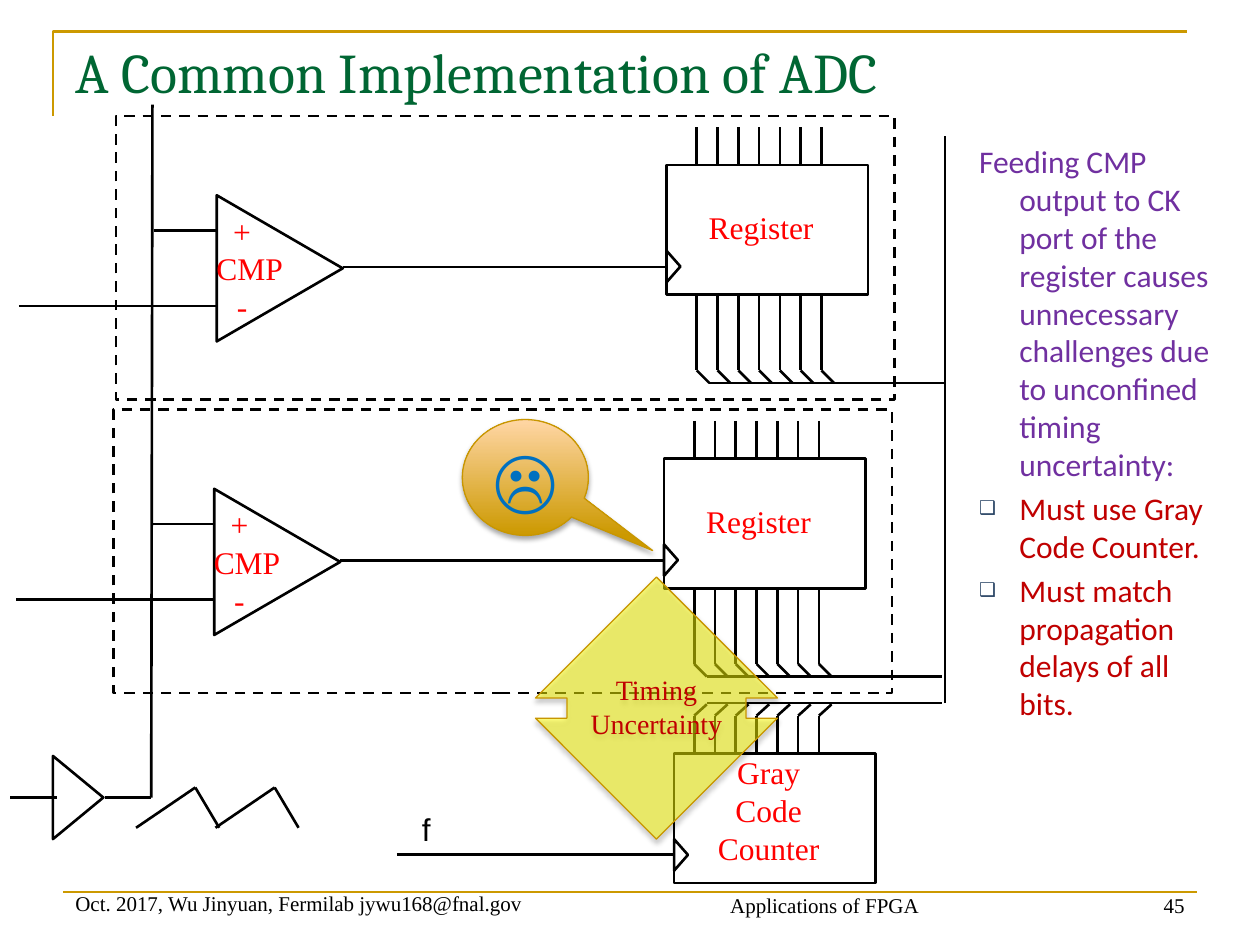
from dataclasses import dataclass

from lxml.etree import SubElement
from pptx import Presentation
from pptx.dml.color import RGBColor as RGB
from pptx.enum.dml import MSO_LINE as Dash
from pptx.enum.shapes import MSO_CONNECTOR as Conn, MSO_SHAPE as Kind
from pptx.enum.text import MSO_ANCHOR as Anchor, MSO_AUTO_SIZE as Fit, PP_ALIGN as Align
from pptx.oxml.ns import qn
from pptx.util import Inches, Pt


@dataclass(frozen=True)
class Theme:
    black: str = "000000"
    white: str = "FFFFFF"
    green: str = "006633"
    gold: str = "CC9900"
    edge: str = "C89600"
    peach: str = "FFD6A5"
    yellow: str = "FFFF00"
    red: str = "FF0000"
    dark: str = "C00000"
    purple: str = "7030A0"
    navy: str = "254061"
    blue: str = "0070C0"
    serif: str = "Times New Roman"
    sans: str = "Calibri"
    head: str = "Cambria"
    plain: str = "Arial"
    small: int = 12
    note: int = 16
    text: int = 18
    title: int = 32
    face: int = 40
    thin: float = 0.75
    wire: float = 1.5


T = Theme()
BITS = 7
PITCH = 0.165


def inches(*nums):
    return [Inches(n) for n in nums]


def style(para, size, color, face=T.serif, align=None):
    para.alignment = align
    font = para.font
    font.size, font.name = Pt(size), face
    font.color.rgb = RGB.from_string(color)


def write(shape, lines, size, color, face=T.serif, align=Align.CENTER,
          anchor=Anchor.MIDDLE, pad=(0.1, 0.05, 0.1, 0.05), wrap=True):
    """Fill a shape with one paragraph per line; pad is left, top, right, bottom."""
    frame = shape.text_frame
    frame.text = "\n".join(lines)
    frame.word_wrap, frame.vertical_anchor = wrap, anchor
    (frame.margin_left, frame.margin_top,
     frame.margin_right, frame.margin_bottom) = inches(*pad)
    for para in frame.paragraphs:
        style(para, size, color, face, align)
    return frame


def label(shapes, box, line, size=T.small, face=T.serif, **opts):
    return write(shapes.add_textbox(*inches(*box)), [line], size, T.black, face, **opts)


def draw(shapes, kind, box, fill=T.white, edge=T.black, width=T.wire):
    shape = shapes.add_shape(kind, *inches(*box))
    shape.shadow.inherit = False
    if fill:
        shape.fill.solid()
        shape.fill.fore_color.rgb = RGB.from_string(fill)
    else:
        shape.fill.background()
    shape.line.color.rgb = RGB.from_string(edge)
    shape.line.width = Pt(width)
    return shape


def wire(shapes, x1, y1, x2, y2, color=T.black):
    line = shapes.add_connector(Conn.STRAIGHT, *inches(x1, y1, x2, y2))
    line.line.color.rgb = RGB.from_string(color)
    line.line.width = Pt(T.wire)
    SubElement(line._element.spPr, qn("a:effectLst"))


def fan(shapes, x, y1, y2, lean=0):
    """Draw one wire per bit, each ending lean to the right of its start."""
    for i in range(BITS):
        left = x + i * PITCH
        wire(shapes, left, y1, left + lean, y2)


def wedge(shapes, box):
    shape = draw(shapes, Kind.ISOSCELES_TRIANGLE, box)
    shape.rotation = 90
    return shape


def block(shapes, x, y, lines, anchor=Anchor.MIDDLE):
    """Draw a clocked block with its clock mark."""
    shape = draw(shapes, Kind.RECTANGLE, (x, y, 1.6, 1.03))
    write(shape, lines, T.text, T.red, anchor=anchor, pad=(0, 0, 0.1, 0.05))
    wedge(shapes, (x - 0.07, y + 0.75, 0.25, 0.11))


def channel(slide, x, y):
    """Draw a comparator feeding a register inside a dashed box at x, y."""
    shapes = slide.shapes.add_group_shape().shapes
    cmp = wedge(shapes, (x + 0.72, y + 0.71, 1.16, 1))
    frame = write(cmp, ["+", "CMP", "-"], T.text, T.red, pad=(0, 0.1, 0, 0), wrap=False)
    frame._txBody.bodyPr.set("vert", "vert270")
    frame.paragraphs[1]._p.get_or_add_pPr().set("marL", str(Inches(0.12)))
    wire(shapes, x + 0.3, y + 0.91, x + 0.8, y + 0.91)
    wire(shapes, x - 0.77, y + 1.51, x + 0.8, y + 1.51)
    wire(shapes, x + 1.8, y + 1.2, x + 4.37, y + 1.2)
    block(shapes, x + 4.37, y + 0.39, ["Register"])
    bit = x + 4.61
    fan(shapes, bit, y + 0.09, y + 0.39)
    fan(shapes, bit, y + 1.42, y + 2.02)
    fan(shapes, bit, y + 2.02, y + 2.12, 0.1)
    wire(shapes, bit + 0.1, y + 2.12, x + 6.58, y + 2.12)
    box = draw(shapes, Kind.RECTANGLE, (x, y, 6.18, 2.25), None)
    box.line.dash_style = Dash.DASH


def counter(shapes):
    block(shapes, 5.35, 5.98, ["Gray", "Code", "Counter"], Anchor.TOP)
    fan(shapes, 5.51, 5.68, 5.98)
    fan(shapes, 5.51, 5.68, 5.59, 0.1)
    wire(shapes, 5.61, 5.58, 7.48, 5.58)
    wire(shapes, 3.15, 6.78, 5.35, 6.78)
    label(shapes, (3.25, 6.38, 0.29, 0.4), "f", T.text, T.plain,
          align=Align.LEFT, anchor=Anchor.TOP, wrap=False)


def ramp(slide):
    """Draw the buffer, its output line and the sawtooth wave."""
    shapes = slide.shapes
    wire(shapes, 1.2, 6.33, 1.21, 0.83)
    wedge(shapes, (0.29, 6.13, 0.66, 0.4))
    wire(shapes, 0.83, 6.33, 1.2, 6.33)
    wire(shapes, 0.08, 6.33, 0.45, 6.33)
    wave = slide.shapes.add_group_shape().shapes
    for x in (1.08, 1.71):
        wire(wave, x, 6.57, x + 0.47, 6.25)
        wire(wave, x + 0.47, 6.25, x + 0.66, 6.57)


def shade(shape):
    """Give a shape a soft shadow below it."""
    effects = shape._element.spPr.find(qn("a:effectLst"))
    cast = SubElement(effects, qn("a:outerShdw"), blurRad=str(Pt(3.1)),
                      dist=str(Pt(1.8)), dir="5400000", rotWithShape="0")
    tint = SubElement(cast, qn("a:srgbClr"), val=T.black)
    SubElement(tint, qn("a:alpha"), val="35000")


def marks(shapes):
    """Draw the sad face callout and the see-through timing arrow."""
    face = draw(shapes, Kind.OVAL_CALLOUT, (3.67, 3.33, 1, 0.92), T.gold, T.edge, T.thin)
    face.adjustments[0], face.adjustments[1] = 1.01, 0.63
    face.fill.gradient()
    face.fill.gradient_angle = 90
    for stop, color in zip(face.fill.gradient_stops, (T.gold, T.peach)):
        stop.color.rgb = RGB.from_string(color)
    write(face, ["☹"], T.face, T.blue)
    arrow = draw(shapes, Kind.UP_DOWN_ARROW, (4.25, 4.58, 1.92, 2.08),
                 T.yellow, T.edge, T.thin)
    arrow.adjustments[0], arrow.adjustments[1] = 0.25, 0.74  # head, shaft
    tint = arrow._element.spPr.find(qn("a:solidFill")).find(qn("a:srgbClr"))
    SubElement(tint, qn("a:alpha"), val="50000")
    write(arrow, ["Timing", "Uncertainty"], T.note, T.dark,
          anchor=Anchor.TOP, pad=(0, 0.05, 0, 0.05))
    for shape in (face, arrow):
        shade(shape)


def place(shape, box):
    shape.left, shape.top, shape.width, shape.height = inches(*box)


def bullet(para, mark):
    """Hang the paragraph, with a small mark or with none."""
    props = para._p.get_or_add_pPr()
    props.set("marL", str(Inches(0.32)))
    props.set("indent", str(Inches(-0.32)))
    if mark:
        SubElement(SubElement(props, qn("a:buClr")), qn("a:srgbClr"), val=T.navy)
        SubElement(props, qn("a:buSzPct"), val="60000")
        SubElement(props, qn("a:buChar"), char=mark)
    else:
        SubElement(props, qn("a:buNone"))


def words(slide):
    title, body = slide.placeholders
    place(title, (0.5, 0.23, 9, 0.67))
    write(title, ["A Common Implementation of ADC"], T.title, T.green, T.head, Align.LEFT)
    place(body, (7.67, 1.08, 2.17, 5.83))
    frame = body.text_frame
    frame.text = "\n".join((
        "Feeding CMP output to CK port of the register causes unnecessary "
        "challenges due to unconfined timing uncertainty:",
        "Must use Gray Code Counter.",
        "Must match propagation delays of all bits."))
    for i, para in enumerate(frame.paragraphs):
        bullet(para, "❑" if i else None)
        para.space_before = Pt(3.6 if i else 0)
        style(para, T.text, T.dark if i else T.purple, T.sans, Align.LEFT)
    for shape in (title, body):
        shape.text_frame.auto_size = Fit.NONE


def frame(shapes):
    """Draw the gold rules and the footer."""
    pen = shapes.build_freeform(*inches(0.42, 0.92), scale=1.0)
    pen.add_line_segments([inches(0.42, 0.25), inches(9.42, 0.25)], close=False)
    rule = pen.convert_to_shape()
    rule.shadow.inherit = False
    rule.fill.background()
    rule.line.color.rgb = RGB.from_string(T.gold)
    rule.line.width = Pt(T.wire)
    wire(shapes, 0.5, 7.08, 9.5, 7.08, T.gold)
    for box, line, align in (
            ((0.5, 7.08, 3.83, 0.24), "Oct. 2017, Wu Jinyuan, Fermilab jywu168@fnal.gov", Align.LEFT),
            ((4.42, 7, 4.25, 0.33), "Applications of FPGA", Align.CENTER),
            ((8.75, 7.08, 0.75, 0.25), "45", Align.RIGHT)):
        label(shapes, box, line, align=align, anchor=Anchor.BOTTOM)


def main():
    deck = Presentation()
    deck.slide_width, deck.slide_height = inches(10, 7.5)
    slide = deck.slides.add_slide(deck.slide_layouts[1])
    shapes = slide.shapes
    frame(shapes)
    words(slide)
    counter(shapes)
    ramp(slide)
    channel(slide, 0.9, 3.25)
    wire(shapes, 7.5, 5.58, 7.5, 1.08)
    channel(slide, 0.92, 0.92)
    marks(shapes)
    deck.save("out.pptx")


if __name__ == "__main__":
    main()
